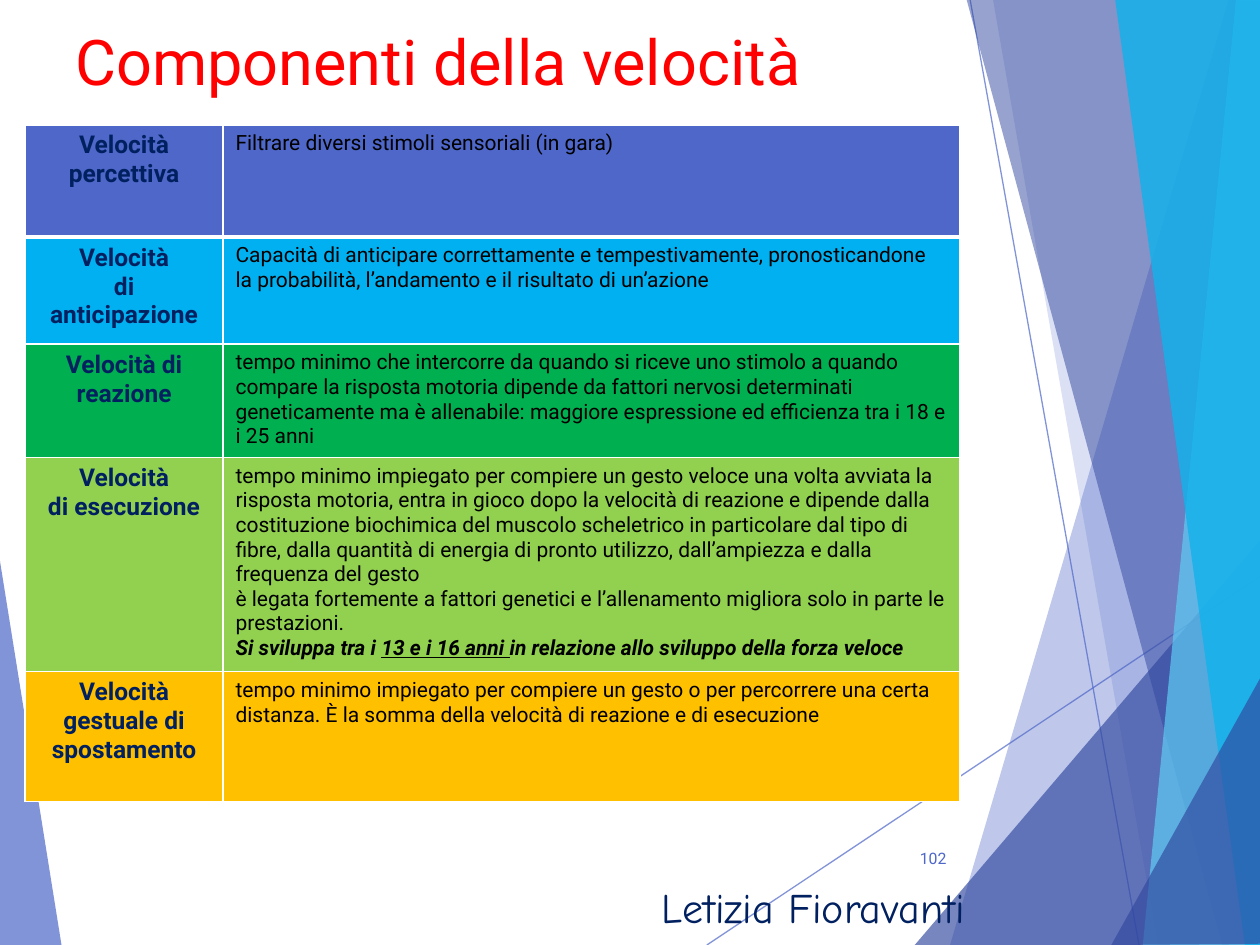
import pptx
import pptx.dml.color
import pptx.enum.shapes
import pptx.enum.text
import pptx.oxml
import pptx.oxml.ns
import pptx.util

RGB = pptx.dml.color.RGBColor
ALIGN = pptx.enum.text.PP_ALIGN
ANCHOR = pptx.enum.text.MSO_ANCHOR
NS = pptx.oxml.ns.nsdecls("a")

SCALE = 9144  # EMU per px, 100 px to the inch

WHITE = RGB(0xFF, 0xFF, 0xFF)
BLACK = RGB(0x00, 0x00, 0x00)
RED = RGB(0xFF, 0x00, 0x00)
NAVY = RGB(0x00, 0x20, 0x60)
INDIGO = RGB(0x4E, 0x67, 0xC8)
DEEP = RGB(0x31, 0x48, 0x9F)
AQUA = RGB(0x5E, 0xCC, 0xF3)
CYAN = RGB(0x12, 0xB2, 0xEB)
BLUE = RGB(0x00, 0xB0, 0xF0)
GREEN = RGB(0x00, 0xB0, 0x50)
LIME = RGB(0x92, 0xD0, 0x50)
GOLD = RGB(0xFF, 0xC0, 0x00)

# Colour, opacity in percent, corners
FACETS = [
    (INDIGO, 36, [(975, 0), (754, 750), (1002, 751), (1001, 1)]),
    (INDIGO, 20, [(788, -1), (919, 750), (1001, 750), (1001, -1)]),
    (DEEP, 66, [(726, 750), (1000, 429), (1001, 750)]),
    (DEEP, 50, [(767, -1), (970, 750), (1001, 749), (1001, -1)]),
    (AQUA, 70, [(981, -1), (907, 750), (1001, 750), (1000, -1)]),
    (CYAN, 82, [(885, -1), (988, 750), (1002, 750), (1000, -1)]),
    (DEEP, 66, [(882, 750), (1002, 535), (1002, 749)]),
]

# Height, fill, name paragraphs, description paragraphs
ROWS = [
    (89, INDIGO, ["Velocità percettiva"],
     ["Filtrare diversi stimoli sensoriali (in gara)"]),
    (85, BLUE, ["Velocità", "di anticipazione"],
     ["Capacità di anticipare correttamente e tempestivamente, pronosticandone "
      "la probabilità, l’andamento e il risultato di un’azione"]),
    (85, GREEN, ["Velocità di reazione"],
     ["tempo minimo che intercorre da quando si riceve uno stimolo a quando "
      "compare la risposta motoria dipende da fattori nervosi determinati "
      "geneticamente ma è allenabile: maggiore espressione ed efficienza "
      "tra i 18 e i 25 anni"]),
    (167, LIME, ["Velocità", "di esecuzione"],
     ["tempo minimo impiegato per compiere un gesto veloce una volta avviata la "
      "risposta motoria, entra in gioco dopo la velocità di reazione e dipende "
      "dalla costituzione biochimica del muscolo scheletrico in particolare dal "
      "tipo di fibre, dalla quantità di energia di pronto utilizzo, "
      "dall’ampiezza e dalla frequenza del gesto",
      "è legata fortemente a fattori genetici e l’allenamento migliora solo in "
      "parte le prestazioni.",
      [("Si sviluppa tra i ", {"bold": True, "italic": True}),
       ("13 e i 16 anni ", {"bold": True, "italic": True, "line": True}),
       ("in relazione allo sviluppo della forza veloce",
        {"bold": True, "italic": True})]]),
    (103, GOLD, ["Velocità gestuale di spostamento"],
     ["tempo minimo impiegato per compiere un gesto o per percorrere una certa "
      "distanza. È la somma della velocità di reazione e di esecuzione"]),
]
COLS = [157, 585]


def px(n):
    return pptx.util.Emu(n * SCALE)


def style(run, size, color, font="Roboto", bold=False, italic=False, line=False):
    face = run.font
    face.size, face.name = pptx.util.Pt(size), font
    face.bold, face.italic, face.underline = bold, italic, line
    face.color.rgb = color


def write(frame, paras, align=ALIGN.LEFT, **form):
    """Fill a text frame; a paragraph is a string or a list of (text, format)."""
    for i, para in enumerate(paras):
        spot = frame.add_paragraph() if i else frame.paragraphs[0]
        spot.alignment = align
        for text, extra in [(para, {})] if isinstance(para, str) else para:
            run = spot.add_run()
            run.text = text
            style(run, **{**form, **extra})


def fade(fill, alpha):
    """Set the opacity, in percent, of a solid fill's colour."""
    node = fill._xPr.find(".//" + pptx.oxml.ns.qn("a:srgbClr"))
    node.append(pptx.oxml.parse_xml(f'<a:alpha {NS} val="{alpha * 1000}"/>'))


def edge(cell, **widths):
    """Draw white cell borders, widths in points by side."""
    props = cell._tc.get_or_add_tcPr()
    for i, side in enumerate("LRTB"):
        props.insert(i, pptx.oxml.parse_xml(
            f'<a:ln{side} {NS} w="{widths.get(side, 1) * 12700}"><a:solidFill>'
            f'<a:srgbClr val="{WHITE}"/></a:solidFill></a:ln{side}>'))


class Deck:
    def __init__(self):
        self.show = pptx.Presentation()
        self.show.slide_width, self.show.slide_height = px(1000), px(750)
        self.slide = self.show.slides.add_slide(self.show.slide_layouts[6])
        self.shapes = self.slide.shapes

    def facet(self, color, alpha, dots):
        path = self.shapes.build_freeform(*dots[0], scale=SCALE)
        path.add_line_segments(dots[1:], close=True)
        shape = path.convert_to_shape()
        shape.shadow.inherit = False
        shape.fill.solid()
        shape.fill.fore_color.rgb = color
        fade(shape.fill, alpha)
        shape.line.fill.background()

    def line(self, *ends):
        kind = pptx.enum.shapes.MSO_CONNECTOR.STRAIGHT
        wire = self.shapes.add_connector(kind, *map(px, ends))
        wire.line.width = pptx.util.Pt(0.75)
        wire.line.color.rgb = INDIGO
        fade(wire.line.fill, 70)
        wire._element.spPr.append(pptx.oxml.parse_xml(f"<a:effectLst {NS}/>"))

    def label(self, text, *box, anchor=ANCHOR.TOP, **form):
        frame = self.shapes.add_textbox(*map(px, box)).text_frame
        frame.word_wrap = True
        frame.vertical_anchor = anchor
        write(frame, [text], **form)

    def table(self, left, top):
        high = sum(row[0] for row in ROWS)
        box = map(px, (left, top, sum(COLS), high))
        grid = self.shapes.add_table(len(ROWS), len(COLS), *box).table
        for col, width in zip(grid.columns, COLS):
            col.width = px(width)
        for r, (height, color, name, text) in enumerate(ROWS):
            grid.rows[r].height = px(height)
            for c in range(len(COLS)):
                cell = grid.cell(r, c)
                cell.fill.solid()
                cell.fill.fore_color.rgb = color
                edge(cell, T=3 if r == 1 else 1, B=3 if r == 0 else 1)
            write(grid.cell(r, 0).text_frame, name, align=ALIGN.CENTER,
                  size=14, color=NAVY, bold=True)
            write(grid.cell(r, 1).text_frame, text, size=12, color=BLACK)


def main():
    deck = Deck()
    deck.facet(INDIGO, 70, [(-1, 439), (49, 751), (-1, 750)])
    deck.line(561, 750, 1001, 457)
    deck.line(770, 0, 904, 750)
    for facet in FACETS:
        deck.facet(*facet)
    deck.label("Componenti della velocità", 50, 13, 900, 125, size=36, color=RED)
    deck.table(20, 99)
    deck.label("102", 705, 661, 56, 40, anchor=ANCHOR.MIDDLE,
               align=ALIGN.RIGHT, size=9, color=INDIGO)
    deck.label("Letizia Fioravanti", 508, 695, 275, 50, align=ALIGN.CENTER,
               size=24, color=NAVY, font="Comic Neue")
    deck.show.save("out.pptx")


if __name__ == "__main__":
    main()
